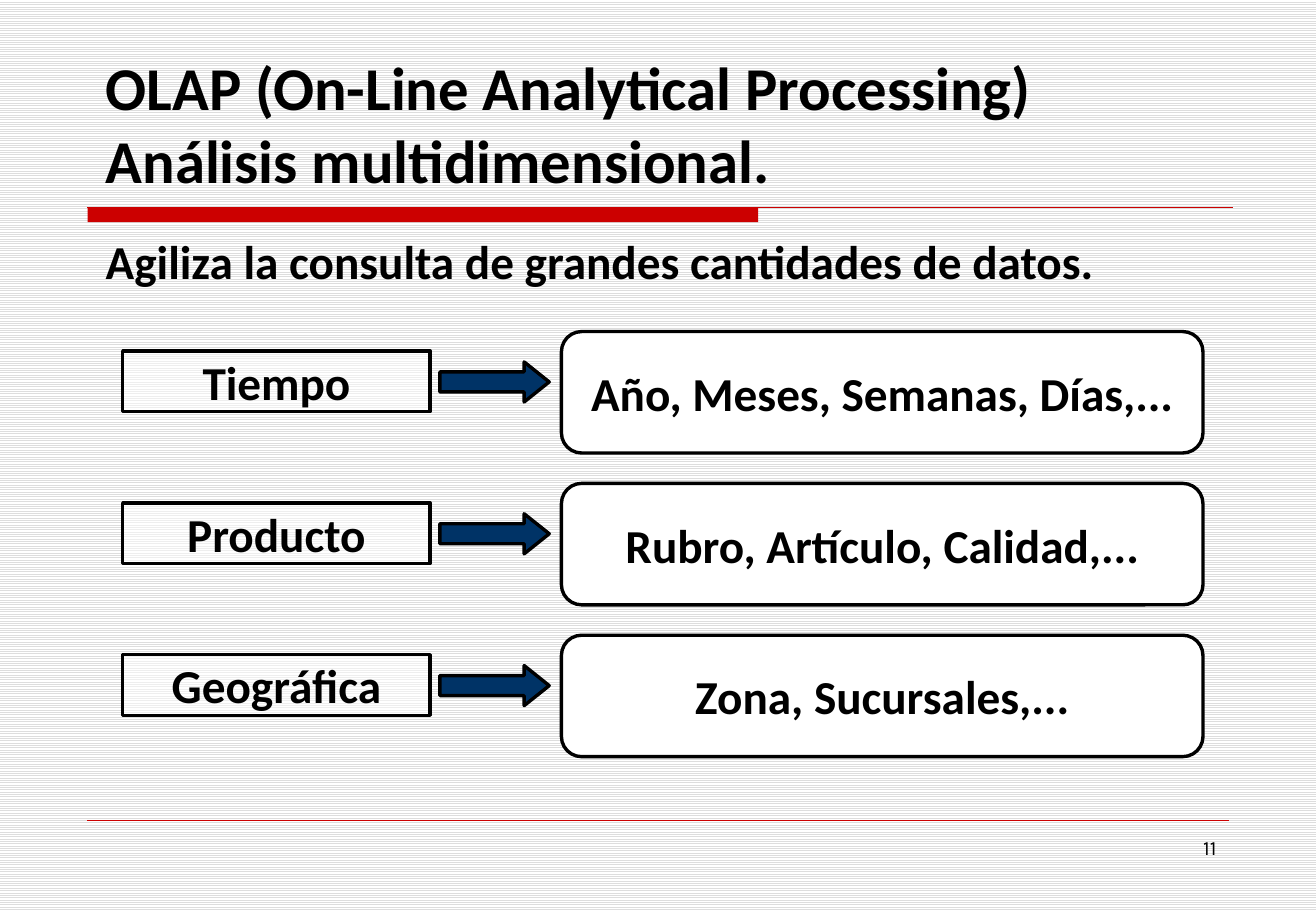
from dataclasses import dataclass

from lxml import etree
from pptx import Presentation
from pptx.dml.color import RGBColor
from pptx.enum.dml import MSO_PATTERN
from pptx.enum.shapes import MSO_CONNECTOR, MSO_SHAPE
from pptx.enum.text import MSO_ANCHOR, MSO_AUTO_SIZE, PP_ALIGN
from pptx.oxml.ns import qn
from pptx.shapes.autoshape import Shape
from pptx.slide import Slide
from pptx.text.text import TextFrame
from pptx.util import Inches, Pt

RECTANGLE = MSO_SHAPE.RECTANGLE
ROUNDED = MSO_SHAPE.ROUNDED_RECTANGLE
ARROW = MSO_SHAPE.RIGHT_ARROW
LEFT, CENTER, RIGHT = PP_ALIGN.LEFT, PP_ALIGN.CENTER, PP_ALIGN.RIGHT
TOP, MIDDLE, BOTTOM = MSO_ANCHOR.TOP, MSO_ANCHOR.MIDDLE, MSO_ANCHOR.BOTTOM

BLACK = RGBColor(0x00, 0x00, 0x00)
WHITE = RGBColor(0xFF, 0xFF, 0xFF)
GRAY = RGBColor(0xDD, 0xDD, 0xDD)
RED = RGBColor(0xCC, 0x00, 0x00)
NAVY = RGBColor(0x00, 0x33, 0x66)

FIRST_ROW_TOP = 2.73
ROW_PITCH = 1.25


@dataclass(frozen=True)
class Dimension:
    name: str
    levels: str


DIMENSIONS = (
    Dimension("Tiempo", "Año, Meses, Semanas, Días,..."),
    Dimension("Producto", "Rubro, Artículo, Calidad,..."),
    Dimension("Geográfica", "Zona, Sucursales,..."),
)


def write_text(frame: TextFrame, text: str, *, size: float = 28, font: str = "Calibri",
               bold: bool = True, align: PP_ALIGN = LEFT, anchor: MSO_ANCHOR = TOP,
               wrap: bool = True) -> None:
    frame.auto_size = MSO_AUTO_SIZE.NONE
    frame.word_wrap = wrap
    frame.vertical_anchor = anchor
    paragraph = frame.paragraphs[0]
    paragraph.alignment = align
    run = paragraph.add_run()
    run.text = text
    run.font.size = Pt(size)
    run.font.name = font
    run.font.bold = bold
    run.font.color.rgb = BLACK


def place(shape: Shape, left: float, top: float, width: float, height: float) -> None:
    shape.left, shape.top = Inches(left), Inches(top)
    shape.width, shape.height = Inches(width), Inches(height)


def add_box(slide: Slide, kind: MSO_SHAPE, left: float, top: float, width: float,
            height: float, fill: RGBColor, line: RGBColor | None = BLACK) -> Shape:
    shape = slide.shapes.add_shape(
        kind, Inches(left), Inches(top), Inches(width), Inches(height))
    shape.shadow.inherit = False
    shape.fill.solid()
    shape.fill.fore_color.rgb = fill
    if line is None:
        shape.line.fill.background()
    else:
        shape.line.color.rgb = line
        shape.line.width = Pt(2)
    return shape


def add_rule(slide: Slide, left: float, right: float, top: float, width: float) -> None:
    rule = slide.shapes.add_connector(
        MSO_CONNECTOR.STRAIGHT, Inches(left), Inches(top), Inches(right), Inches(top))
    rule.line.color.rgb = RED
    rule.line.width = Pt(width)
    etree.SubElement(rule._element.spPr, qn("a:effectLst"))


def make_half_transparent(shape: Shape) -> None:
    color = shape._element.spPr.find(qn("a:solidFill")).find(qn("a:srgbClr"))
    etree.SubElement(color, qn("a:alpha"), val="50000")


def add_dimension(slide: Slide, dimension: Dimension, top: float) -> None:
    name_box = add_box(slide, RECTANGLE, 1.01, top + 0.16, 2.53, 0.5, WHITE)
    make_half_transparent(name_box)
    write_text(name_box.text_frame, dimension.name, align=CENTER, anchor=MIDDLE, wrap=False)

    arrow = add_box(slide, ARROW, 3.62, top + 0.25, 0.9, 0.33, NAVY)
    arrow.adjustments[0] = 0.5
    arrow.adjustments[1] = 0.625

    levels_box = add_box(slide, ROUNDED, 4.62, top, 5.28, 1, WHITE)
    write_text(levels_box.text_frame, dimension.levels, align=CENTER, anchor=MIDDLE, wrap=False)


def add_headings(slide: Slide) -> None:
    title = slide.shapes.title
    place(title, 0.77, 0.33, 9.39, 1.33)
    write_text(title.text_frame,
               "OLAP (On-Line Analytical Processing) Análisis multidimensional.",
               size=36, anchor=BOTTOM)

    body = slide.placeholders[1]
    place(body, 0.77, 1.86, 9.38, 4.88)
    write_text(body.text_frame, "Agiliza la consulta de grandes cantidades de datos.")
    properties = body.text_frame.paragraphs[0]._p.get_or_add_pPr()
    properties.set("marL", "0")
    properties.set("indent", "0")
    etree.SubElement(properties, qn("a:buNone"))


def main() -> None:
    presentation = Presentation()
    presentation.slide_width = Inches(10.83)
    presentation.slide_height = Inches(7.5)
    slide = presentation.slides.add_slide(presentation.slide_layouts[1])

    background = slide.background.fill
    background.patterned()
    background.pattern = MSO_PATTERN.LIGHT_HORIZONTAL
    background.fore_color.rgb = GRAY
    background.back_color.rgb = WHITE

    add_box(slide, RECTANGLE, 0.72, 1.71, 5.52, 0.12, RED, line=None)
    add_rule(slide, 0.72, 10.15, 1.71, 0.75)
    add_rule(slide, 0.72, 10.11, 6.75, 0.25)
    add_headings(slide)

    number = slide.shapes.add_textbox(Inches(7.76), Inches(6.83), Inches(2.35), Inches(0.52))
    write_text(number.text_frame, "11", size=12, font="Karla", bold=False, align=RIGHT)

    for row, dimension in enumerate(DIMENSIONS):
        add_dimension(slide, dimension, FIRST_ROW_TOP + row * ROW_PITCH)

    presentation.save("out.pptx")


if __name__ == "__main__":
    main()
